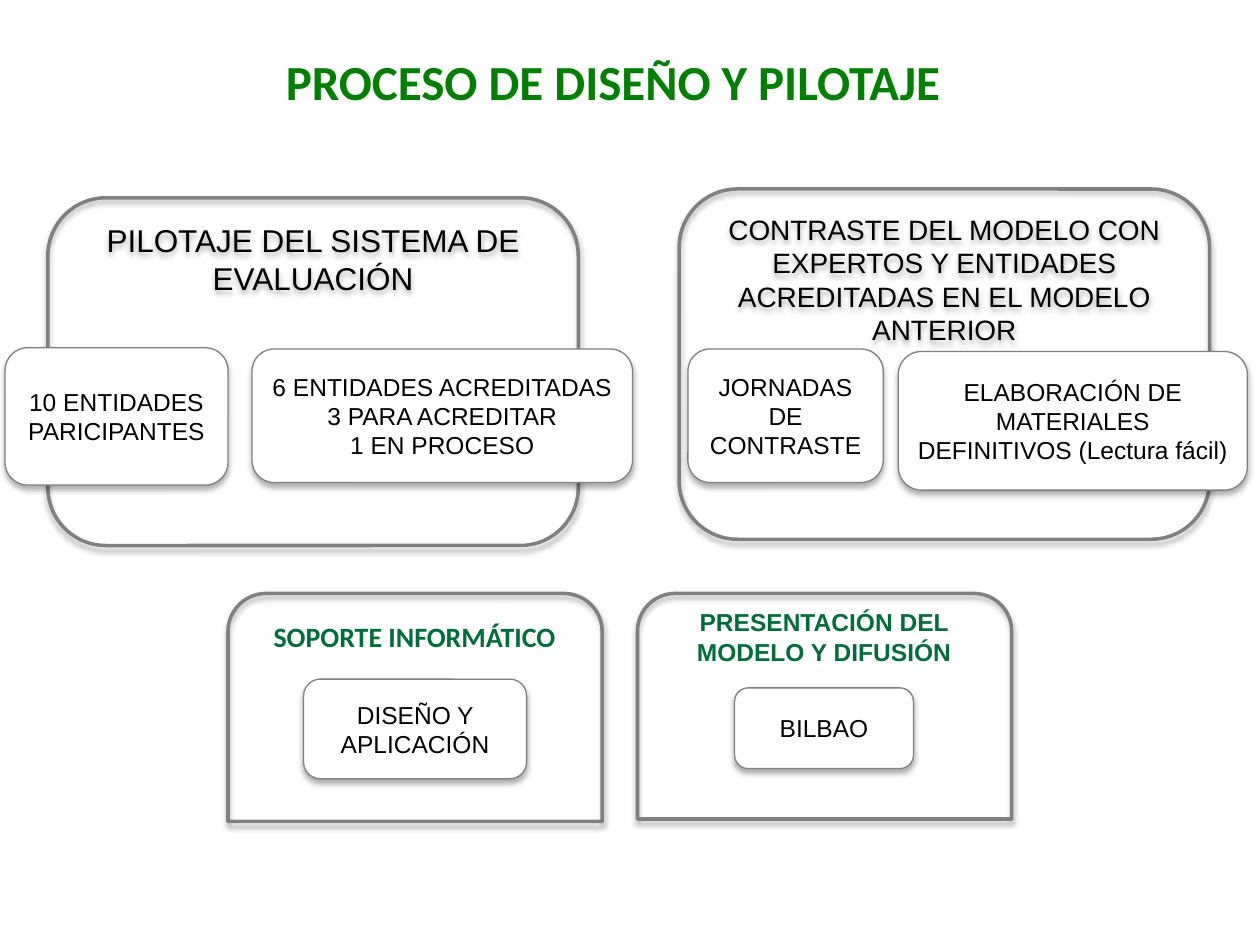
from lxml import etree
from pptx import Presentation
from pptx import util as u
from pptx.dml.color import RGBColor
from pptx.enum import shapes, text
from pptx.oxml.ns import qn

BLACK = RGBColor(0x00, 0x00, 0x00)
WHITE = RGBColor(0xFF, 0xFF, 0xFF)
GRAY = RGBColor(0x80, 0x80, 0x80)
TITLE_GREEN = RGBColor(0x00, 0x80, 0x00)
HEADING_GREEN = RGBColor(0x00, 0x6D, 0x3C)

ROUNDED = shapes.MSO_SHAPE.ROUNDED_RECTANGLE
ROUNDED_TOP = shapes.MSO_SHAPE.ROUND_2_SAME_RECTANGLE

PANELS = [
    (ROUNDED, (0.38, 1.57, 4.21, 2.76), "PILOTAJE DEL SISTEMA DE EVALUACIÓN", 18),
    (ROUNDED, (5.39, 1.5, 4.21, 2.78),
     "CONTRASTE DEL MODELO CON EXPERTOS Y ENTIDADES ACREDITADAS EN EL MODELO ANTERIOR", 16),
    (ROUNDED_TOP, (1.81, 4.71, 2.97, 1.81), "", 16),
    (ROUNDED_TOP, (5.06, 4.71, 2.97, 1.79), "", 16),
]

CARDS = [
    ((0.04, 2.76, 1.77, 1.09), "10 ENTIDADES PARICIPANTES"),
    ((2, 2.77, 3.02, 1.06), "6 ENTIDADES ACREDITADAS\n3 PARA ACREDITAR\n1 EN PROCESO"),
    ((5.46, 2.77, 1.55, 1.06), "JORNADAS DE CONTRASTE"),
    ((7.13, 2.79, 2.77, 1.1), "ELABORACIÓN DE MATERIALES DEFINITIVOS (Lectura fácil)"),
    ((2.41, 5.39, 1.77, 0.79), "DISEÑO Y APLICACIÓN"),
    ((5.83, 5.46, 1.42, 0.64), "BILBAO"),
]


def inches(place):
    return [u.Inches(length) for length in place]


def write(shape, wording, size, font="Arial", color=BLACK, bold=False,
          align=text.PP_ALIGN.CENTER, anchor=text.MSO_ANCHOR.TOP):
    frame = shape.text_frame
    frame.word_wrap = True
    frame.vertical_anchor = anchor
    frame.text = wording
    for paragraph in frame.paragraphs:
        paragraph.alignment = align
        paragraph.font.name = font
        paragraph.font.size = u.Pt(size)
        paragraph.font.bold = bold
        paragraph.font.color.rgb = color


def add_shadow(shape):
    shape.shadow.inherit = False
    effects = shape._element.spPr.find(qn("a:effectLst"))
    shadow = etree.SubElement(
        effects, qn("a:outerShdw"), blurRad=str(u.Pt(3.5)), dist=str(u.Pt(2.2)),
        dir="5400000", rotWithShape="0")
    color = etree.SubElement(shadow, qn("a:srgbClr"), val=str(BLACK))
    etree.SubElement(color, qn("a:alpha"), val="32000")


def add_outlined(page, kind, place, line_width):
    shape = page.shapes.add_shape(kind, *inches(place))
    shape.line.color.rgb = GRAY
    shape.line.width = u.Pt(line_width)
    add_shadow(shape)
    return shape


def add_panel(page, kind, place, wording, size):
    panel = add_outlined(page, kind, place, 2)
    panel.fill.background()
    if wording:
        write(panel, wording, size)


def add_card(page, place, wording):
    card = add_outlined(page, ROUNDED, place, 0.75)
    card.fill.solid()
    card.fill.fore_color.rgb = WHITE
    write(card, wording, 14, anchor=text.MSO_ANCHOR.MIDDLE)


def add_heading(page, place, wording, size, font, color=HEADING_GREEN,
                align=text.PP_ALIGN.CENTER):
    box = page.shapes.add_textbox(*inches(place))
    write(box, wording, size, font, color, True, align)
    box.text_frame.auto_size = text.MSO_AUTO_SIZE.SHAPE_TO_FIT_TEXT


def main():
    deck = Presentation()
    deck.slide_width, deck.slide_height = inches((10, 7.5))
    page = deck.slides.add_slide(deck.slide_layouts[6])

    add_heading(page, (2.17, 0.36, 5.51, 0.57), "PROCESO DE DISEÑO Y PILOTAJE",
                28, "Calibri", TITLE_GREEN, text.PP_ALIGN.LEFT)
    for panel in PANELS:
        add_panel(page, *panel)
    for card in CARDS:
        add_card(page, *card)
    add_heading(page, (1.95, 4.87, 2.68, 0.37), "SOPORTE INFORMÁTICO", 16, "Calibri")
    add_heading(page, (5.2, 4.77, 2.68, 0.57), "PRESENTACIÓN DEL MODELO Y DIFUSIÓN",
                14, "Arial")

    deck.save("out.pptx")


if __name__ == "__main__":
    main()
